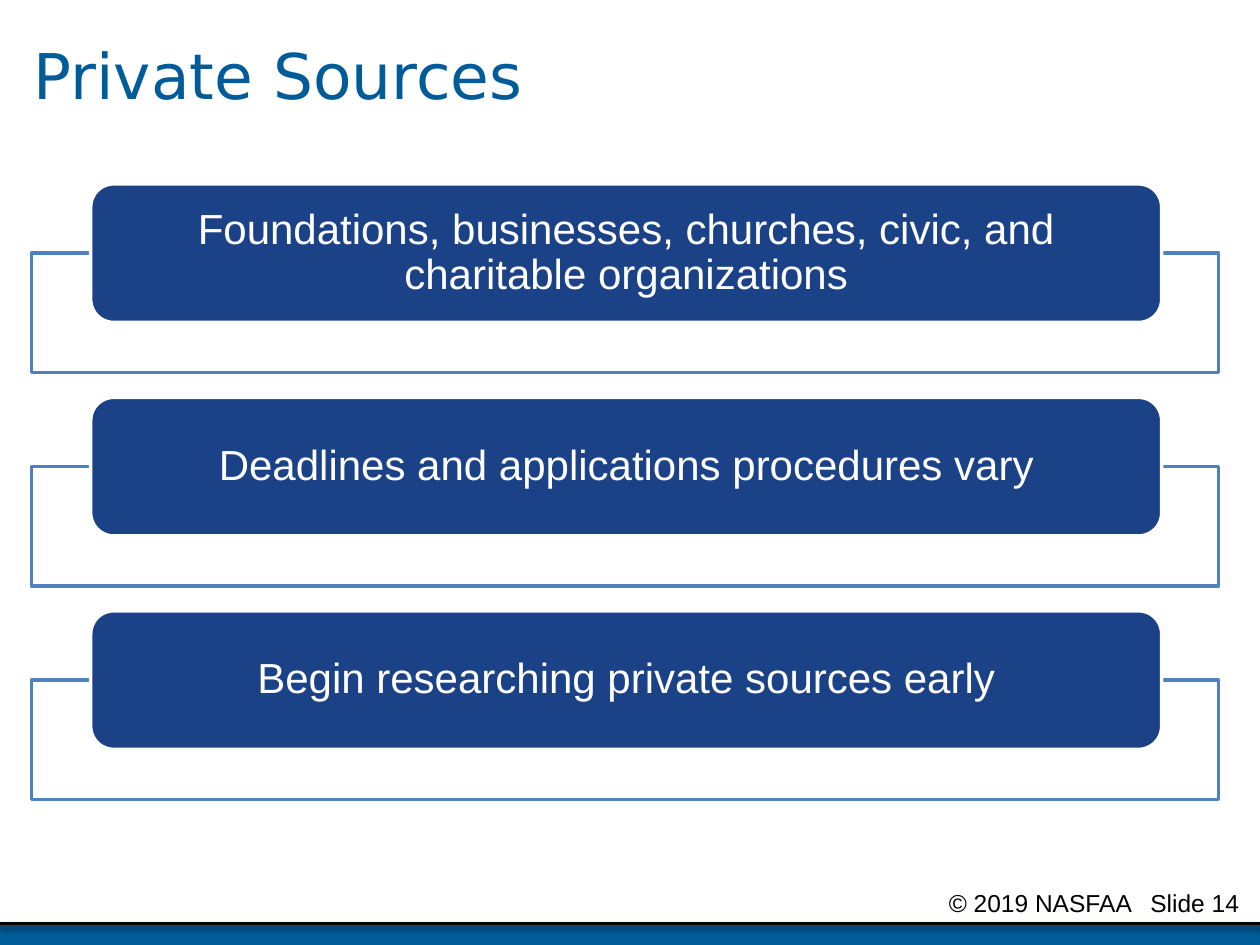
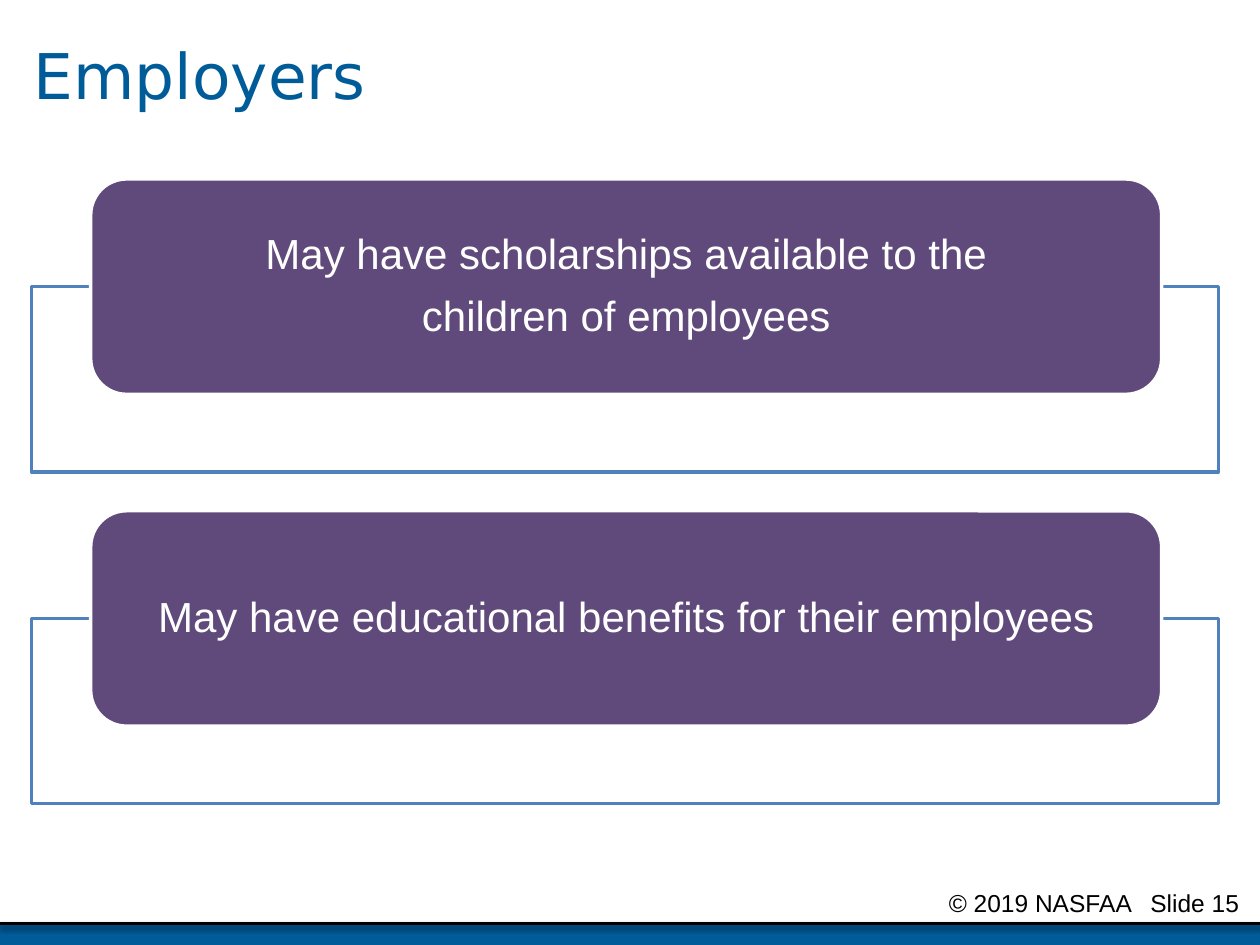
from lxml import etree
from pptx import Presentation
from pptx.dml.color import RGBColor
from pptx.enum.shapes import MSO_CONNECTOR, MSO_SHAPE
from pptx.enum.text import MSO_ANCHOR, PP_ALIGN
from pptx.oxml import parse_xml
from pptx.oxml.ns import nsdecls, qn
from pptx.util import Inches, Pt

RECTANGLE, ROUNDED = MSO_SHAPE.RECTANGLE, MSO_SHAPE.ROUNDED_RECTANGLE
STRAIGHT = MSO_CONNECTOR.STRAIGHT
CENTER, LEFT = PP_ALIGN.CENTER, PP_ALIGN.LEFT
TOP, MIDDLE = MSO_ANCHOR.TOP, MSO_ANCHOR.MIDDLE

# Content: each card is a list of paragraphs
SLIDES = [
    {"title": "Private Sources", "number": 14, "color": "navy",
     "top": 1.46, "card_height": 1.1,
     "cards": [
         ["Foundations, businesses, churches, civic, and charitable organizations"],
         ["Deadlines and applications procedures vary"],
         ["Begin researching private sources early"],
     ]},
    {"title": "Employers", "number": 15, "color": "purple",
     "top": 1.42, "card_height": 1.71,
     "cards": [
         ["May have scholarships available to the", "children of employees"],
         ["May have educational benefits for their employees"],
     ]},
]
COPYRIGHT = "© 2019 NASFAA"

# Shared style
COLORS = {"blue": "005B99", "navy": "1B4187", "purple": "604A7B",
          "frame": "4F81BD", "white": "FFFFFF", "black": "000000"}
BODY_FONT, TITLE_FONT = "Arial", "DejaVu Sans"
SLIDE_WIDTH, SLIDE_HEIGHT = 10, 7.5
BAND_TOP = 7.33
CARD_LEFT, CARD_WIDTH = 0.72, 8.5
FRAME_LEFT, FRAME_WIDTH = 0.25, 9.42
# Multiples of the card height
FRAME_RATIO, PITCH_RATIO = 0.86, 1.54


def color(name):
    return RGBColor.from_string(COLORS[name])


def add_box(slide, kind, left, top, width, height, fill, line=None):
    shape = slide.shapes.add_shape(
        kind, Inches(left), Inches(top), Inches(width), Inches(height))
    shape.shadow.inherit = False
    shape.fill.solid()
    shape.fill.fore_color.rgb = color(fill)
    if line:
        shape.line.color.rgb = color(line)
        shape.line.width = Pt(2)
    else:
        shape.line.fill.background()
    return shape


def write(shape, lines, size, ink, font=BODY_FONT, align=LEFT, anchor=MIDDLE,
          insets=(0.1, 0.05, 0.1, 0.05), line_spacing=0.9, space_after=0):
    frame = shape.text_frame
    frame.text = "\n".join(lines)
    frame.word_wrap = True
    frame.vertical_anchor = anchor
    (frame.margin_left, frame.margin_top,
     frame.margin_right, frame.margin_bottom) = map(Inches, insets)
    for paragraph in frame.paragraphs:
        paragraph.alignment = align
        paragraph.line_spacing = line_spacing
        paragraph.space_after = Pt(space_after)
        for run in paragraph.runs:
            run.font.name = font
            run.font.size = Pt(size)
            run.font.color.rgb = color(ink)


def add_text_box(slide, left, top, width, height):
    return slide.shapes.add_textbox(
        Inches(left), Inches(top), Inches(width), Inches(height))


def add_footer(slide, number):
    add_box(slide, RECTANGLE, 0, BAND_TOP, SLIDE_WIDTH, SLIDE_HEIGHT - BAND_TOP, "blue")
    rule = slide.shapes.add_connector(
        STRAIGHT, 0, Inches(BAND_TOP), Inches(SLIDE_WIDTH), Inches(BAND_TOP))
    rule.line.color.rgb = color("black")
    rule.line.width = Pt(2)
    rule._element.spPr.append(parse_xml(
        f'<a:effectLst {nsdecls("a")}>'
        f'<a:outerShdw blurRad="{Pt(3.1)}" dist="{Pt(1.6)}" dir="5400000" rotWithShape="0">'
        f'<a:srgbClr val="{COLORS["black"]}"><a:alpha val="38000"/></a:srgbClr>'
        '</a:outerShdw></a:effectLst>'))

    # A tab stop sets the gap between the copyright and the slide number
    label = add_text_box(slide, 6.25, 7, 3.75, 0.25)
    properties = label.text_frame.paragraphs[0]._p.get_or_add_pPr()
    write(label, [f"{COPYRIGHT}\tSlide {number}"], 14, "black", anchor=TOP,
          insets=(1.28, 0.05, 0, 0.05), line_spacing=1)
    properties = label.text_frame.paragraphs[0]._p.get_or_add_pPr()
    tabs = etree.SubElement(properties, qn("a:tabLst"))
    etree.SubElement(tabs, qn("a:tab"), pos=str(Inches(1.6)), algn="l")


def add_card(slide, lines, top, height, fill):
    frame = add_box(slide, RECTANGLE, FRAME_LEFT, top + height / 2,
                    FRAME_WIDTH, height * FRAME_RATIO, "white", "frame")
    fill_color = frame._element.spPr.find(qn("a:solidFill"))[0]
    etree.SubElement(fill_color, qn("a:alpha"), val="90000")
    card = add_box(slide, ROUNDED, CARD_LEFT, top, CARD_WIDTH, height, fill, "white")
    write(card, lines, 24, "white", align=CENTER,
          insets=(0.3, 0.05, 0.3, 0.05), space_after=9.6)


def build_slide(presentation, content):
    slide = presentation.slides.add_slide(presentation.slide_layouts[6])
    add_footer(slide, content["number"])
    title = add_text_box(slide, 0.17, 0, 9.67, 1.25)
    write(title, [content["title"]], 36, "blue", font=TITLE_FONT)
    height = content["card_height"]
    for index, lines in enumerate(content["cards"]):
        top = content["top"] + index * height * PITCH_RATIO
        add_card(slide, lines, top, height, content["color"])


def main():
    presentation = Presentation()
    presentation.slide_width = Inches(SLIDE_WIDTH)
    presentation.slide_height = Inches(SLIDE_HEIGHT)
    for content in SLIDES:
        build_slide(presentation, content)
    presentation.save("out.pptx")


if __name__ == "__main__":
    main()
